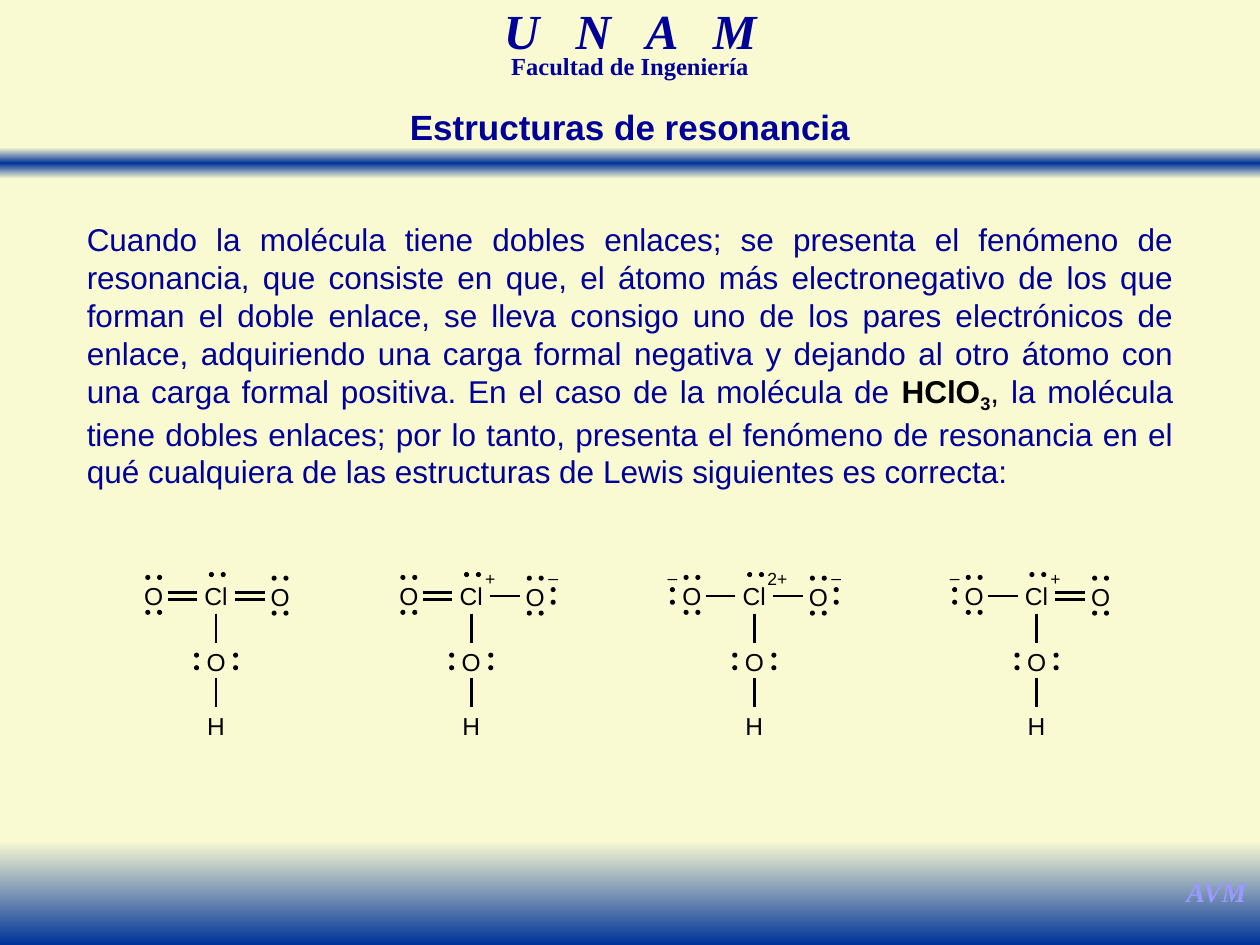
from dataclasses import dataclass, field
from itertools import product
from typing import Any

from lxml.etree import SubElement
from pptx import Presentation
from pptx.dml.color import RGBColor
from pptx.enum.shapes import MSO_CONNECTOR as Connector, MSO_SHAPE as Preset
from pptx.enum.text import MSO_ANCHOR as Anchor, PP_ALIGN as Align
from pptx.oxml.ns import qn
from pptx.util import Inches, Pt

COLORS = {"paper": "FAFAD2", "band": "003399", "text": "000099",
          "ink": "000000", "signature": "9999FF"}
COLUMNS, ROWS = 100, 75
CELL = Inches(0.1)

SANS = {"name": "Arial", "size": Pt(18)}
SERIF = {"name": "Times New Roman", "bold": True}
FORMULA = {**SANS, "bold": True}

# Rows of the molecule and column offsets from its vertical axis
ATOM_ROW, HYDROXYL_ROW, HYDROGEN_ROW = 47.3, 52.5, 57.6
LEFT_OXYGEN, RIGHT_OXYGEN = -4.95, 5.08
BOND_INNER, BOND_OUTER = 1.5, 3.85
DOT = 0.4


@dataclass
class Run:
    text: str
    font: dict[str, Any]
    color: str = "text"
    extra: dict[str, str] = field(default_factory=dict)


@dataclass
class TextBlock:
    left: float
    top: float
    width: float
    height: float
    runs: list[Run]
    align: Align = Align.CENTER
    line_spacing: float = 1.0
    wrap: bool = True
    inset: float | None = None
    anchor: Anchor = Anchor.TOP


@dataclass
class Molecule:
    axis: float
    left_double: bool
    right_double: bool
    charge: str = ""
    charge_offset: float = 1.5


def cells(*lengths: float) -> list[int]:
    return [round(length * CELL) for length in lengths]


def rgb(color: str) -> RGBColor:
    return RGBColor.from_string(COLORS[color])


def add_band(shapes, top: float, height: float, stops: list[str]) -> None:
    """Draw a full-width bar with evenly spaced gradient stops, top to bottom."""
    shape = shapes.add_shape(Preset.RECTANGLE, *cells(0, top, COLUMNS, height))
    shape.shadow.inherit = False
    shape.line.fill.background()
    shape.fill.gradient()
    shape.fill.gradient_angle = 270
    stop_list = shape._element.spPr.find(qn("a:gradFill")).find(qn("a:gsLst"))
    for old_stop in list(stop_list):
        stop_list.remove(old_stop)
    for index, color in enumerate(stops):
        position = str(100000 * index // (len(stops) - 1))
        stop = SubElement(stop_list, qn("a:gs"), pos=position)
        SubElement(stop, qn("a:srgbClr"), val=COLORS[color])


def add_text(shapes, block: TextBlock) -> None:
    box = shapes.add_textbox(*cells(block.left, block.top, block.width, block.height))
    frame = box.text_frame
    frame.word_wrap = block.wrap
    frame.vertical_anchor = block.anchor
    if block.inset is not None:
        for side in ("left", "top", "right", "bottom"):
            setattr(frame, f"margin_{side}", cells(block.inset)[0])
    paragraph = frame.paragraphs[0]
    paragraph.alignment = block.align
    paragraph.line_spacing = block.line_spacing
    for item in block.runs:
        run = paragraph.add_run()
        run.text = item.text
        for name, value in item.font.items():
            setattr(run.font, name, value)
        run.font.color.rgb = rgb(item.color)
        for name, value in item.extra.items():
            run._r.get_or_add_rPr().set(name, value)


def add_label(shapes, text: str, x: float, y: float, size: int = 14) -> None:
    """Write an atom or a charge centred on a point."""
    width, height = 2.7, 3.2
    font = {"name": "Arial", "size": Pt(size)}
    add_text(shapes, TextBlock(x - width / 2, y - height / 2, width, height,
                               [Run(text, font, "ink")], wrap=False,
                               inset=0.4, anchor=Anchor.MIDDLE))


def add_bond(shapes, x1: float, y1: float, x2: float, y2: float) -> None:
    line = shapes.add_connector(Connector.STRAIGHT, *cells(x1, y1, x2, y2))
    line.line.color.rgb = rgb("ink")
    line.line.width = Pt(1.5)
    SubElement(line._element.spPr, qn("a:effectLst"))


def add_pair(shapes, x: float, y: float, upright: bool = False) -> None:
    """Draw two electrons centred on a point."""
    for sign in (-1, 1):
        dx, dy = (0, 0.5 * sign) if upright else (0.47 * sign, 0)
        dot = shapes.add_shape(Preset.OVAL, *cells(x + dx - DOT / 2,
                                                   y + dy - DOT / 2, DOT, DOT))
        dot.shadow.inherit = False
        dot.fill.solid()
        dot.fill.fore_color.rgb = rgb("ink")
        dot.line.fill.background()


def add_molecule(slide, molecule: Molecule) -> None:
    shapes = slide.shapes.add_group_shape().shapes
    axis = molecule.axis
    for text, row in (("Cl", ATOM_ROW), ("O", HYDROXYL_ROW), ("H", HYDROGEN_ROW)):
        add_label(shapes, text, axis, row)
    add_pair(shapes, axis + 0.1, 45.6)
    for top in (48.7, 53.8):
        add_bond(shapes, axis, top, axis, top + 2.35)
    for side in (-1, 1):
        add_pair(shapes, axis + 1.55 * side, HYDROXYL_ROW, upright=True)

    sides = ((-1, LEFT_OXYGEN, molecule.left_double),
             (1, RIGHT_OXYGEN, molecule.right_double))
    for side, offset, double in sides:
        oxygen = axis + offset
        add_label(shapes, "O", oxygen, ATOM_ROW + 0.04 * side)
        for row in (45.86, 48.63):
            add_pair(shapes, oxygen, row + 0.03 * side)
        for row in (47, 47.6) if double else (47.3,):
            add_bond(shapes, axis + BOND_INNER * side, row,
                     axis + BOND_OUTER * side, row)
        if not double:
            add_pair(shapes, axis + 6.5 * side, ATOM_ROW, upright=True)
            add_label(shapes, "–", axis + 6.5 * side, 45.85, 10)
    if molecule.charge:
        add_label(shapes, molecule.charge, axis + molecule.charge_offset, 45.95, 10)


BODY = [
    Run("Cuando la molécula tiene dobles enlaces; se presenta el fenómeno de "
        "resonancia, que consiste en que, el átomo más electronegativo de los que "
        "forman el doble enlace, se lleva consigo uno de los pares electrónicos de "
        "enlace, adquiriendo una carga formal negativa y dejando al otro átomo con "
        "una carga formal positiva. En el caso de la molécula de ", SANS),
    Run("HClO", FORMULA, "ink"),
    Run("3", FORMULA, "ink", {"baseline": "-25000"}),
    Run(", ", SANS, "ink"),
    Run("la molécula tiene dobles enlaces; por lo tanto, presenta el fenómeno de "
        "resonancia en el qué cualquiera de las estructuras de Lewis siguientes es "
        "correcta:", SANS),
]

INITIALS = {**SERIF, "size": Pt(28), "italic": True}
TEXTS = [
    TextBlock(93.1, 68.9, 6.9, 3.7,
              [Run("AVM", {**SERIF, "size": Pt(16), "italic": True}, "signature")],
              wrap=False),
    TextBlock(30.4, 0.8, 39.2, 4.3,
              [Run("U N A ", INITIALS, extra={"spc": "700"}), Run("M", INITIALS)],
              line_spacing=0.7),
    TextBlock(32.1, 4.2, 35.8, 2.6,
              [Run("Facultad de Ingeniería", {**SERIF, "size": Pt(14)})],
              line_spacing=0.7),
    TextBlock(5.9, 17, 88.2, 22.2, BODY, Align.JUSTIFY),
    TextBlock(31.4, 7.9, 37.2, 4.4,
              [Run("Estructuras de resonancia", {**FORMULA, "size": Pt(20)})],
              wrap=False),
]

MOLECULES = [
    Molecule(17.15, True, True),
    Molecule(37.4, True, False, "+"),
    Molecule(59.87, False, False, "2+", 1.83),
    Molecule(82.27, False, True, "+"),
]


def main() -> None:
    presentation = Presentation()
    presentation.slide_width, presentation.slide_height = cells(COLUMNS, ROWS)
    slide = presentation.slides.add_slide(presentation.slide_layouts[6])
    slide.background.fill.solid()
    slide.background.fill.fore_color.rgb = rgb("paper")
    add_band(slide.shapes, 11.7, 2.5, ["paper", "band", "paper"])
    add_band(slide.shapes, 66.7, 8.3, ["paper", "band"])
    for block in TEXTS:
        add_text(slide.shapes, block)
    for molecule in MOLECULES:
        add_molecule(slide, molecule)
    presentation.save("out.pptx")


if __name__ == "__main__":
    main()
